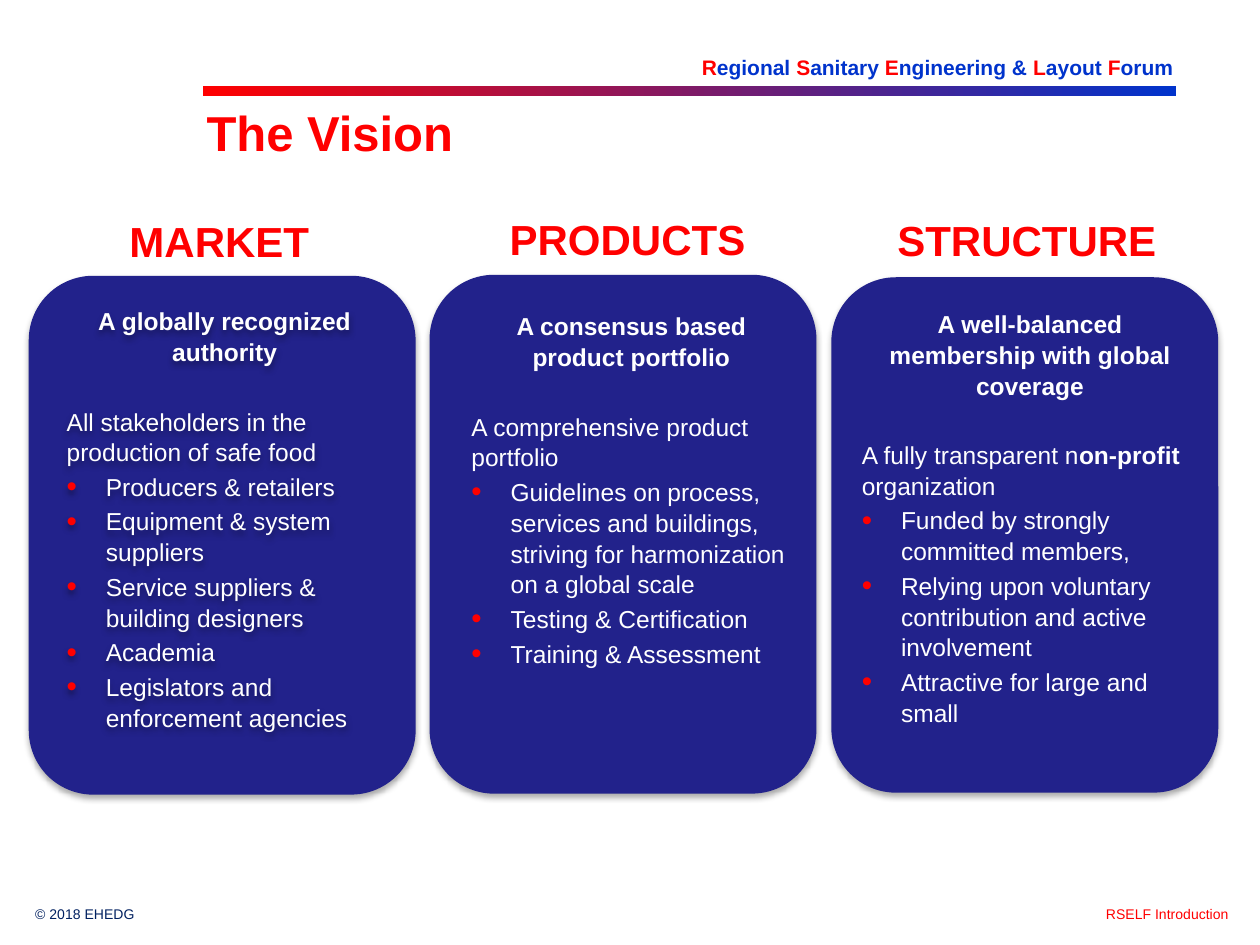
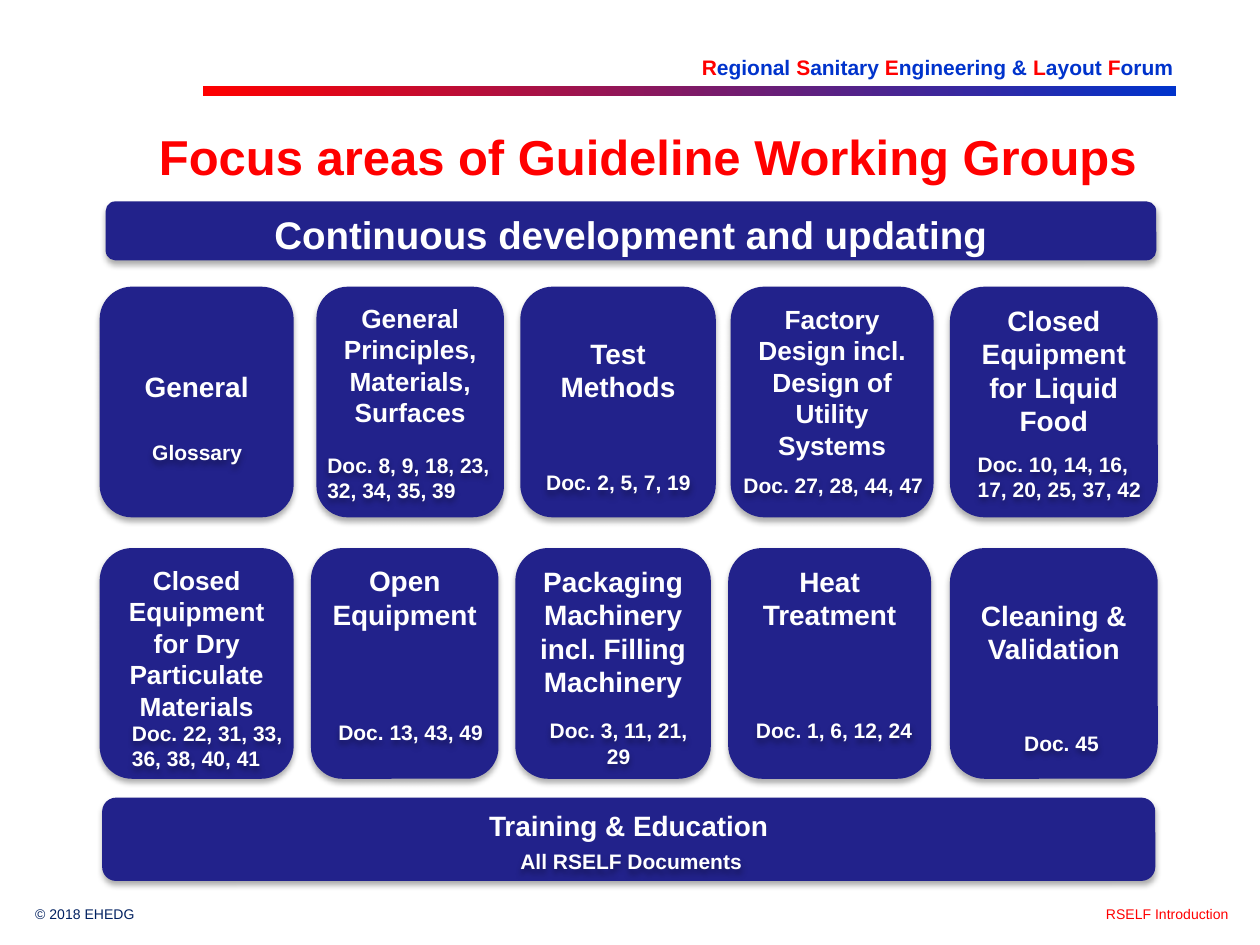
from dataclasses import dataclass

from lxml.etree import SubElement
from pptx import Presentation
from pptx.dml.color import RGBColor
from pptx.enum.shapes import MSO_SHAPE as Preset
from pptx.enum.text import MSO_ANCHOR as Anchor, MSO_AUTO_SIZE as AutoSize, PP_ALIGN as Align
from pptx.oxml.ns import qn
from pptx.util import Cm, Pt

RED = RGBColor(0xFF, 0x00, 0x00)
BLUE = RGBColor(0x00, 0x33, 0xCC)
NAVY = RGBColor(0x22, 0x22, 0x8B)
FOOTER_NAVY = RGBColor(0x00, 0x20, 0x60)
WHITE = RGBColor(0xFF, 0xFF, 0xFF)
FONT = "Arial"
COMPARISON_LAYOUT, TITLE_ONLY_LAYOUT = 4, 5
GROUP_NAME = "Regional Sanitary Engineering & Layout Forum"


@dataclass(frozen=True)
class Box:
    """A frame in centimetres."""
    left: float
    top: float
    width: float
    height: float

    def lengths(self) -> tuple:
        return Cm(self.left), Cm(self.top), Cm(self.width), Cm(self.height)


@dataclass(frozen=True)
class Pillar:
    heading: str
    heading_box: Box
    panel: Box
    body: Box
    claim: str
    intro: tuple[tuple[str, bool], ...]
    bullets: tuple[str, ...]
    text_shadow: bool = False


@dataclass(frozen=True)
class FocusArea:
    title: str
    size: int
    left: float
    documents: str
    note: Box
    lines_above: int = 0
    note_align: Align = Align.CENTER


PILLARS = (
    Pillar("MARKET", Box(1.37, 4.22, 6.1, 1.27), Box(0.58, 5.56, 7.8, 10.46),
           Box(1.09, 6.02, 6.88, 9.78), "A globally recognized authority",
           (("All stakeholders in the production of safe food", False),),
           ("Producers & retailers", "Equipment & system suppliers",
            "Service suppliers & building designers", "Academia",
            "Legislators and enforcement agencies"), text_shadow=True),
    Pillar("PRODUCTS", Box(9.6, 4.17, 6.1, 1.27), Box(8.66, 5.54, 7.8, 10.46),
           Box(9.25, 6.12, 6.96, 7.62), "A consensus based product portfolio",
           (("A comprehensive product portfolio", False),),
           ("Guidelines on process, services and buildings, "
            "striving for harmonization on a global scale",
            "Testing & Certification", "Training & Assessment")),
    Pillar("STRUCTURE", Box(17.65, 4.19, 6.1, 1.27), Box(16.76, 5.59, 7.8, 10.39),
           Box(17.12, 6.07, 7.29, 8.26), "A well-balanced membership with global coverage",
           (("A fully transparent n", False), ("on-profit ", True), ("organization", False)),
           ("Funded by strongly committed members,",
            "Relying upon voluntary contribution and active involvement",
            "Attractive for large and small")),
)

AREA_WIDTHS = (3.91, 3.78, 3.94, 4.09, 4.19)
AREA_HEIGHT = 4.65
AREA_ROWS = {
    5.78: (
        FocusArea("General", 16, 2.01, "Glossary", Box(2.82, 8.74, 2.69, 0.76), 2, Align.LEFT),
        FocusArea("General Principles, Materials, Surfaces", 15, 6.38,
                  "Doc. 8, 9, 18, 23, 32, 34, 35, 39", Box(6.35, 8.99, 4.09, 1.27),
                  note_align=Align.LEFT),
        FocusArea("Test Methods", 16, 10.49, "Doc. 2, 5, 7, 19", Box(10.54, 9.35, 3.86, 0.76), 1),
        FocusArea("Factory Design incl. Design of Utility Systems", 15, 14.73,
                  "Doc. 27, 28, 44, 47", Box(14.68, 9.4, 4.24, 0.76)),
        FocusArea("Closed Equipment for Liquid Food", 16, 19.15,
                  "Doc. 10, 14, 16, 17, 20, 25, 37, 42", Box(19.46, 8.97, 3.86, 1.27),
                  note_align=Align.LEFT),
    ),
    11.05: (
        FocusArea("Closed Equipment for Dry Particulate Materials", 15, 2.01,
                  "Doc. 22, 31, 33, 36, 38, 40, 41", Box(2.41, 14.4, 3.56, 1.27),
                  note_align=Align.LEFT),
        FocusArea("Open Equipment", 16, 6.27, "Doc. 13, 43, 49", Box(6.5, 14.38, 3.56, 0.76)),
        FocusArea("Packaging Machinery incl. Filling Machinery", 16, 10.39,
                  "Doc. 3, 11, 21, 29", Box(10.69, 14.35, 3.56, 1.27)),
        FocusArea("Heat Treatment", 16, 14.68, "Doc. 1, 6, 12, 24",
                  Box(14.99, 14.35, 3.78, 0.76), note_align=Align.LEFT),
        FocusArea("Cleaning & Validation", 16, 19.15, "Doc. 45", Box(19.51, 14.6, 3.78, 0.76), 1),
    ),
}


def style_runs(para, size: float, color: RGBColor, bold: bool = False) -> None:
    for span in para.runs:
        span.font.name = FONT
        span.font.size = Pt(size)
        span.font.bold = bold
        span.font.color.rgb = color


def add_shadow(shape) -> None:
    shape.shadow.inherit = False
    effects = shape.element.spPr.find(qn("a:effectLst"))
    outer = SubElement(effects, qn("a:outerShdw"), blurRad="44450", dist="27940",
                       dir="5400000", rotWithShape="0")
    black = SubElement(outer, qn("a:srgbClr"), val="000000")
    SubElement(black, qn("a:alpha"), val="32000")


def add_label(page, box: Box, text: str, size: float, color: RGBColor,
              bold: bool = False, align: Align = Align.LEFT):
    label = page.shapes.add_textbox(*box.lengths())
    label.text_frame.word_wrap = True
    para = label.text_frame.paragraphs[0]
    para.text = text
    para.alignment = align
    style_runs(para, size, color, bold)
    return label


def add_note(page, box: Box, text: str, align: Align = Align.CENTER) -> None:
    add_shadow(add_label(page, box, text, 12, WHITE, True, align))


def add_panel(page, box: Box, text: str = "", size: float = 16, lines_above: int = 0) -> None:
    """Rounded navy panel; its text starts lines_above lines below the top."""
    panel = page.shapes.add_shape(Preset.ROUNDED_RECTANGLE, *box.lengths())
    panel.fill.solid()
    panel.fill.fore_color.rgb = NAVY
    panel.line.fill.background()
    add_shadow(panel)
    if text:
        frame = panel.text_frame
        frame.vertical_anchor = Anchor.TOP
        frame.margin_top = Cm(0.13 + 0.68 * lines_above)
        frame.text = text
        frame.paragraphs[0].alignment = Align.CENTER
        style_runs(frame.paragraphs[0], size, WHITE, True)


def add_group_name(page) -> None:
    """Name of the group, with the capitals in red."""
    label = add_label(page, Box(11.91, 0.97, 11.99, 0.76), "", 12, BLUE)
    para = label.text_frame.paragraphs[0]
    para.alignment = Align.RIGHT
    for position, word in enumerate(GROUP_NAME.split()):
        gap = " " if position else ""
        pieces = ((gap, BLUE), (word[0], RED), (word[1:], BLUE))
        if word == "&":
            pieces = ((gap + word, BLUE),)
        for text, color in pieces:
            if text:
                span = para.add_run()
                span.text = text
                span.font.name, span.font.size, span.font.bold = FONT, Pt(12), True
                span.font.color.rgb = color


def add_page(deck, layout: int, title: str, title_box: Box):
    """New slide with the shared band, header, footers and title."""
    page = deck.slides.add_slide(deck.slide_layouts[layout])
    band = page.shapes.add_shape(Preset.RECTANGLE, *Box(4.09, 1.73, 19.61, 0.2).lengths())
    band.shadow.inherit = False
    band.line.fill.background()
    band.fill.gradient()
    band.fill.gradient_angle = 0
    for stop, color in zip(band.fill.gradient_stops, (RED, BLUE)):
        stop.color.rgb = color
    add_group_name(page)
    add_label(page, Box(14.5, 18.14, 10.52, 0.58), "RSELF Introduction", 8, RED,
              align=Align.RIGHT)
    add_label(page, Box(0.46, 18.14, 5.92, 0.56), "© 2018 EHEDG", 8, FOOTER_NAVY)

    place(page.shapes.title, title_box)
    frame = page.shapes.title.text_frame
    frame.vertical_anchor = Anchor.MIDDLE
    frame.text = title
    frame.paragraphs[0].alignment = Align.LEFT
    style_runs(frame.paragraphs[0], 28, RED, True)
    return page


def place(placeholder, box: Box) -> None:
    """Move a placeholder to its box and in front of what is drawn so far."""
    placeholder.left, placeholder.top, placeholder.width, placeholder.height = box.lengths()
    placeholder.text_frame.auto_size = AutoSize.NONE
    placeholder.text_frame.word_wrap = True
    placeholder.element.getparent().append(placeholder.element)


def set_bullet(para, shown: bool) -> None:
    properties = para._p.get_or_add_pPr()
    indent = Cm(0.79) if shown else 0
    properties.set("marL", str(indent))
    properties.set("indent", str(-indent))
    if shown:
        color = SubElement(properties, qn("a:buClr"))
        SubElement(color, qn("a:srgbClr"), val=str(RED))
        SubElement(properties, qn("a:buSzPct"), val="120000")
        SubElement(properties, qn("a:buFont"), typeface=FONT)
        SubElement(properties, qn("a:buChar"), char="•")
    else:
        SubElement(properties, qn("a:buNone"))


def fill_body(body, pillar: Pillar) -> None:
    place(body, pillar.body)
    frame = body.text_frame
    frame.vertical_anchor = Anchor.TOP
    intro = "".join(text for text, _ in pillar.intro)
    frame.text = "\n".join((pillar.claim, intro, *pillar.bullets))
    for position, para in enumerate(frame.paragraphs):
        is_claim = position == 0
        set_bullet(para, position > 1)
        para.alignment = Align.CENTER if is_claim else Align.LEFT
        para.line_spacing = 1.05
        para.space_before = Pt(0)
        para.space_after = Pt(22 if is_claim else 2.1)
        if position == 1:
            para.runs[0].text = pillar.intro[0][0]
            for text, _ in pillar.intro[1:]:
                para.add_run().text = text
        style_runs(para, 14, WHITE, is_claim)
    for span, (_, bold) in zip(frame.paragraphs[1].runs, pillar.intro):
        span.font.bold = bold
    if pillar.text_shadow:
        body.fill.background()
        add_shadow(body)


def build_vision(deck) -> None:
    page = add_page(deck, COMPARISON_LAYOUT, "The Vision", Box(3.91, 1.7, 14.25, 1.93))
    bodies = [holder for holder in page.placeholders if holder.placeholder_format.idx > 0]
    for pillar, body in zip(PILLARS, bodies):
        add_panel(page, pillar.panel)
        add_label(page, pillar.heading_box, pillar.heading, 24, RED, True, Align.CENTER)
        fill_body(body, pillar)
    for unused in bodies[len(PILLARS):]:
        unused.element.getparent().remove(unused.element)


def build_focus_areas(deck) -> None:
    page = add_page(deck, TITLE_ONLY_LAYOUT, "Focus areas of Guideline Working Groups",
                    Box(2.95, 2.24, 21.89, 1.8))
    add_panel(page, Box(2.13, 4.06, 21.18, 1.19), "Continuous development and updating", 22)
    for top, areas in AREA_ROWS.items():
        for area, width in zip(areas, AREA_WIDTHS):
            add_panel(page, Box(area.left, top, width, AREA_HEIGHT),
                      area.title, area.size, area.lines_above)
            add_note(page, area.note, area.documents, area.note_align)
    add_panel(page, Box(2.06, 16.08, 21.23, 1.68), "Training & Education")
    add_note(page, Box(9.78, 16.99, 5.89, 0.76), "All RSELF Documents")


def main() -> None:
    deck = Presentation()
    deck.slide_width, deck.slide_height = Cm(25.4), Cm(19.05)
    build_vision(deck)
    build_focus_areas(deck)
    deck.save("out.pptx")


if __name__ == "__main__":
    main()
